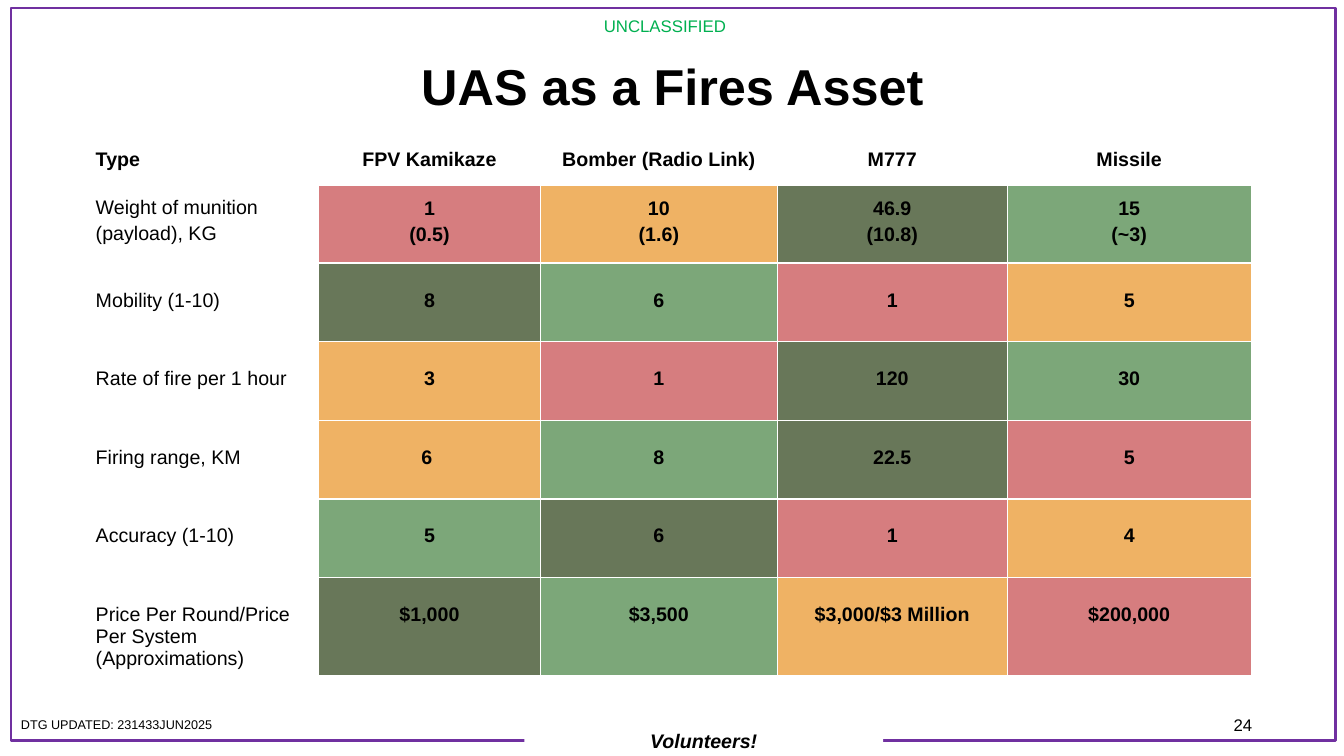
from lxml import etree
from pptx import Presentation
from pptx.dml.color import RGBColor
from pptx.enum.shapes import MSO_SHAPE
from pptx.enum.text import MSO_ANCHOR, PP_ALIGN
from pptx.oxml.ns import qn
from pptx.util import Inches, Pt

RECT = MSO_SHAPE.RECTANGLE
LEFT, MID, RIGHT = PP_ALIGN.LEFT, PP_ALIGN.CENTER, PP_ALIGN.RIGHT
TOP, CENTER = MSO_ANCHOR.TOP, MSO_ANCHOR.MIDDLE

PAD = (0.1, 0.05, 0.1, 0.05)
WHITE = "FFFFFF"
RANKS = {"D": "687759", "G": "7CA779", "A": "EFB264", "R": "D67D7F"}
COLS = (2.25, 2.2, 2.35, 2.28, 2.42)
HEADS = ("Type", "FPV Kamikaze", "Bomber (Radio Link)", "M777", "Missile")
ROWS = (
    ("RADG", "Weight of munition (payload), KG",
     "1\n(0.5)", "10\n(1.6)", "46.9\n(10.8)", "15\n(~3)"),
    ("DGRA", "Mobility (1-10)", "8", "6", "1", "5"),
    ("ARDG", "Rate of fire per 1 hour", "3", "1", "120", "30"),
    ("AGDR", "Firing range, KM", "6 ", "8", "22.5", "5"),
    ("GDRA", "Accuracy (1-10)", "5", "6", "1", "4"),
    ("DGAR", "Price Per Round/Price Per System (Approximations)",
     "$1,000", "$3,500", "$3,000/$3 Million", "$200,000"),
)


def color(code):
    """Turn a hex string into a colour."""
    return RGBColor.from_string(code)


def style(item, values):
    """Set each attribute named in a dict."""
    for name, value in values.items():
        setattr(item, name, value)


def pad(item, sides):
    """Set left, top, right and bottom margins in inches."""
    names = ("margin_left", "margin_top", "margin_right", "margin_bottom")
    style(item, {name: Inches(side) for name, side in zip(names, sides)})


def write(frame, text, size, align=LEFT, code="000000", gap=0, space=None, **font):
    """Write one paragraph per line of text."""
    frame.word_wrap = True
    for i, line in enumerate(text.split("\n")):
        para = frame.paragraphs[0] if i == 0 else frame.add_paragraph()
        style(para, {"alignment": align, "line_spacing": space})
        if i:
            para.space_before = Pt(gap)
        run = para.add_run()
        run.text = line
        style(run.font, {"name": "Arial", "size": Pt(size), "bold": False, **font})
        run.font.color.rgb = color(code)


def label(slide, box, text, size, sides=PAD, anchor=TOP, **look):
    """Add a text box."""
    frame = slide.shapes.add_textbox(*map(Inches, box)).text_frame
    pad(frame, sides)
    frame.vertical_anchor = anchor
    write(frame, text, size, **look)


def block(slide, box, fill=None, line=None):
    """Add a plain rectangle."""
    shape = slide.shapes.add_shape(RECT, *map(Inches, box))
    shape.shadow.inherit = False
    if fill:
        shape.fill.solid()
        shape.fill.fore_color.rgb = color(fill)
    else:
        shape.fill.background()
    if line:
        shape.line.color.rgb = color(line)
        shape.line.width = Pt(2)
    else:
        shape.line.fill.background()
    return shape


def edge(cell, widths):
    """Draw white borders of the given point widths."""
    props = cell._tc.get_or_add_tcPr()
    for i, (side, width) in enumerate(widths.items()):
        line = etree.Element(qn(f"a:ln{side}"), w=str(Pt(width)))
        fill = etree.SubElement(line, qn("a:solidFill"))
        etree.SubElement(fill, qn("a:srgbClr"), val=WHITE)
        props.insert(i, line)


def fill_cell(cell, text, top, rank=None, **look):
    """Fill one table cell."""
    if rank:
        cell.fill.solid()
        cell.fill.fore_color.rgb = color(RANKS[rank])
    else:
        cell.fill.background()
    cell.vertical_anchor = TOP
    pad(cell, (0 if look.get("align") == MID else 0.04, top, 0, 0))
    write(cell.text_frame, text, 14, **look)


def grid(slide):
    """Add the table that compares the weapons."""
    highs = [0.44] + [0.78] * 5 + [0.97]
    box = (0.91, 1.39, sum(COLS), sum(highs))
    table = slide.shapes.add_table(len(highs), len(COLS), *map(Inches, box)).table
    style(table, {"first_row": False, "horz_banding": False})
    for col, width in zip(table.columns, COLS):
        col.width = Inches(width)
    for row, high in zip(table.rows, highs):
        row.height = Inches(high)

    for j, head in enumerate(HEADS):
        fill_cell(table.cell(0, j), head, 0.09, align=MID if j else LEFT, bold=True)
    for i, (ranks, name, *values) in enumerate(ROWS, 1):
        first = i == 1
        fill_cell(table.cell(i, 0), name, 0.08 if first else 0.26,
                  space=1.19 if first else None)
        for j, (rank, value) in enumerate(zip(ranks, values), 1):
            fill_cell(table.cell(i, j), value, 0.13 if first else 0.26, rank,
                      align=MID, gap=3.1, bold=True)
    for i in range(len(highs)):
        for j in range(len(COLS)):
            edge(table.cell(i, j), {"L": 1, "R": 1, "T": 3 if i == 1 else 1,
                                    "B": 3 if i == 0 else 1})


def main():
    """Build the slide and save it."""
    deck = Presentation()
    style(deck, {"slide_width": Inches(13.33), "slide_height": Inches(7.5)})
    slide = deck.slides.add_slide(deck.slide_layouts[6])

    block(slide, (0.11, 0.08, 13.14, 7.27), line="7030A0")
    label(slide, (4.75, 0.11, 3.69, 0.3), "UNCLASSIFIED", 12, align=MID, code="00B050")
    motto = block(slide, (5.2, 7.18, 3.56, 0.33), fill=WHITE).text_frame
    pad(motto, PAD)
    motto.vertical_anchor = TOP
    write(motto, "Volunteers!", 14, align=MID, bold=True, italic=True)
    label(slide, (0.11, 7.06, 2.88, 0.25), "DTG UPDATED: 231433JUN2025", 9)
    grid(slide)
    label(slide, (9.42, 7.04, 3, 0.22), "24", 12, (0, 0, 0, 0), CENTER,
          align=RIGHT, space=1.39)
    label(slide, (0.92, 0.53, 11.5, 0.62), "UAS as a Fires Asset", 36,
          (0, 0.01, 0, 0), CENTER, align=MID, bold=True)
    deck.save("out.pptx")


if __name__ == "__main__":
    main()
